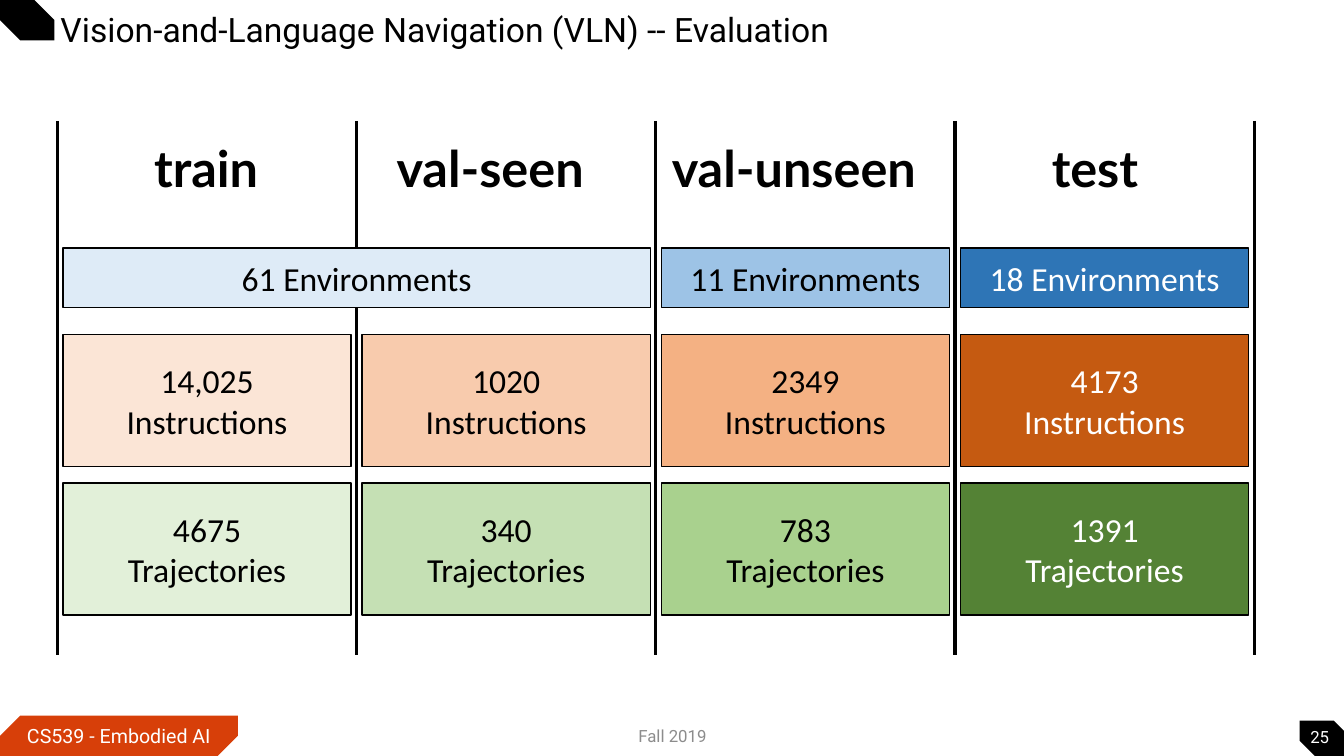
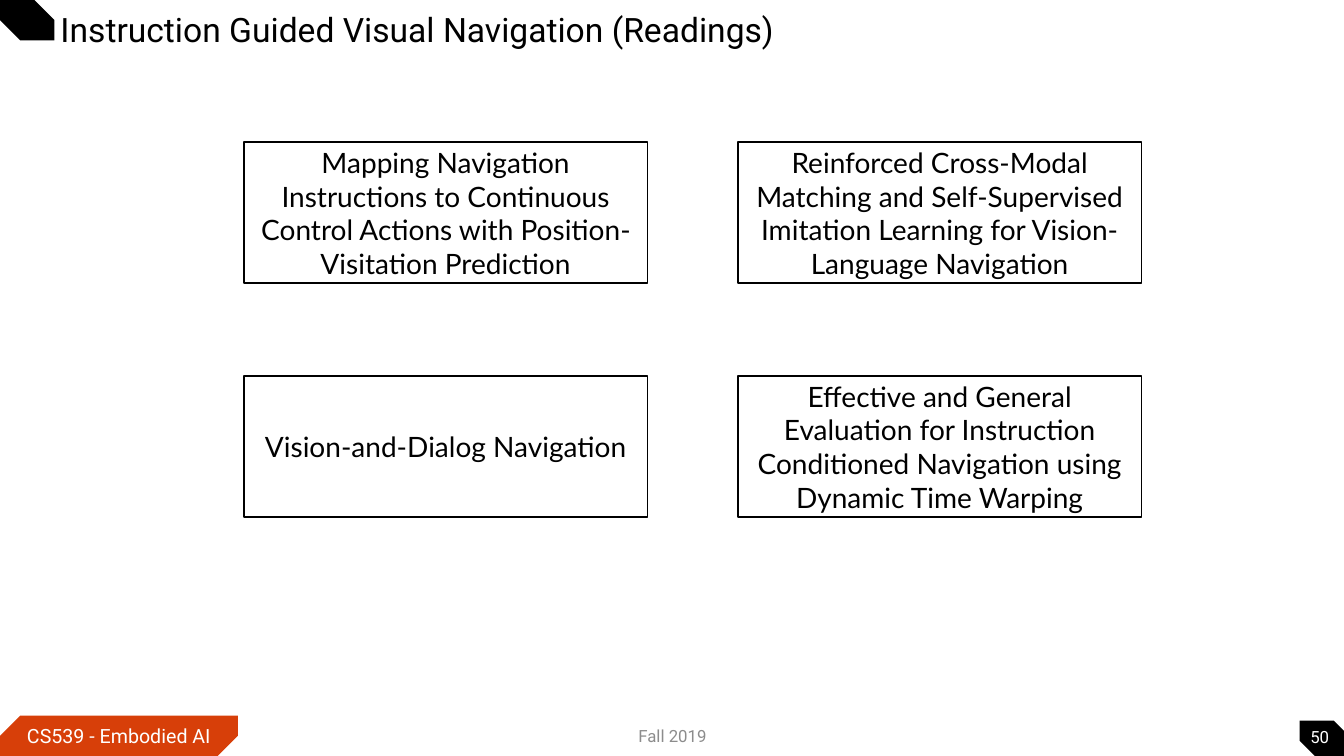
"""Build two lecture slides on instruction-guided navigation."""
from lxml import etree
from pptx import Presentation
from pptx.dml.color import RGBColor
from pptx.enum.shapes import MSO_CONNECTOR, MSO_SHAPE
from pptx.enum.text import MSO_ANCHOR, PP_ALIGN
from pptx.oxml.ns import qn
from pptx.util import Inches, Pt

RECTANGLE, SNIPPED = MSO_SHAPE.RECTANGLE, MSO_SHAPE.SNIP_2_DIAG_RECTANGLE
STRAIGHT = MSO_CONNECTOR.STRAIGHT
LEFT, CENTER = PP_ALIGN.LEFT, PP_ALIGN.CENTER
TOP, MIDDLE = MSO_ANCHOR.TOP, MSO_ANCHOR.MIDDLE

WIDTH, HEIGHT = 13.33, 7.5
COLORS = {
    "black": "000000", "white": "FFFFFF", "orange": "D73F09", "gray": "8C8C8C",
    "blue 1": "DEEBF7", "blue 2": "9DC3E6", "blue 3": "2E75B6",
    "rust 1": "FBE5D6", "rust 2": "F8CBAD", "rust 3": "F4B183", "rust 4": "C55A11",
    "green 1": "E2F0D9", "green 2": "C5E0B4", "green 3": "A9D18E", "green 4": "548235",
}
DARK_FILLS = {"blue 3", "rust 4", "green 4"}

SPLIT_LEFT, SPLIT_RIGHT, SPLIT_COUNT, SPLIT_GAP = 0.57, 12.44, 4, 0.11
SPLIT_PITCH = (SPLIT_RIGHT - SPLIT_LEFT) / SPLIT_COUNT
RULE_TOP, RULE_BOTTOM = 1.2, 6.5
SPLIT_NAMES = [("train", 0.29), ("val-seen", 1.1), ("val-unseen", 2.02), ("test", 3.29)]
SPLIT_ROWS = [
    (2.46, 0.59, [
        (0, 2, "blue 1", ["61 Environments"]),
        (2, 1, "blue 2", ["11 Environments"]),
        (3, 1, "blue 3", ["18 Environments"]),
    ]),
]
for row_top, family, unit, counts in [
    (3.32, "rust", "Instructions", ["14,025", "1020", "2349", "4173"]),
    (4.79, "green", "Trajectories", ["4675", "340", "783", "1391"]),
]:
    SPLIT_ROWS.append((row_top, 1.31, [
        (column, 1, f"{family} {column + 1}", [count, unit])
        for column, count in enumerate(counts)
    ]))

READING_LEFT, READING_TOP = 2.42, 1.41
READING_PITCH_X, READING_PITCH_Y = 4.9, 2.32
READINGS = [
    "Mapping Navigation Instructions to Continuous Control Actions "
    "with Position-Visitation Prediction",
    "Reinforced Cross-Modal Matching and Self-Supervised Imitation Learning "
    "for Vision-Language Navigation",
    "Vision-and-Dialog Navigation",
    "Effective and General Evaluation for Instruction Conditioned Navigation "
    "using Dynamic Time Warping",
]


def color(name):
    """Return the named colour."""
    return RGBColor.from_string(COLORS[name])


class Deck:
    """Hold the presentation, its style and the current slide."""

    def __init__(self):
        """Start an empty widescreen presentation."""
        self.presentation = Presentation()
        self.presentation.slide_width = Inches(WIDTH)
        self.presentation.slide_height = Inches(HEIGHT)
        self.slide = None

    def add_slide(self, title, number):
        """Add a slide with the shared title, corner marks and footer."""
        self.slide = self.presentation.slides.add_slide(self.presentation.slide_layouts[6])
        self.snipped((12.89, 7.15, 0.54, 0.4), "black", (0, 0.5))
        footer = self.snipped((0, 7.1, 2.36, 0.4), "orange", (0.5, 0))
        self.set_lines(footer, ["CS539 - Embodied AI"], 14, "Roboto", "white")
        self.snipped((0, 0, 0.54, 0.4), "black", (0, 0.5))
        heading = self.text((0, 0.12, 11.32, 0.39), title, 24, align=LEFT, spacing=0.9)
        heading.text_frame.margin_left = Inches(0.6)
        self.text((4.42, 7.1, 4.5, 0.4), "Fall 2019", 12, name="gray")
        self.text((12.89, 7.15, 0.4, 0.31), str(number), 12, name="white")

    def set_lines(self, shape, lines, size, font, name, align=CENTER, anchor=MIDDLE,
                  bold=False, spacing=None):
        """Fill a shape with one paragraph per line."""
        frame = shape.text_frame
        frame.word_wrap = True
        frame.vertical_anchor = anchor
        for index, line in enumerate(lines):
            paragraph = frame.add_paragraph() if index else frame.paragraphs[0]
            paragraph.text = line
            paragraph.alignment = align
            paragraph.line_spacing = spacing
            paragraph.font.size = Pt(size)
            paragraph.font.name = font
            paragraph.font.bold = bold
            paragraph.font.color.rgb = color(name)

    def text(self, box, line, size, font="Roboto", name="black", **style):
        """Add a text box."""
        shape = self.slide.shapes.add_textbox(*map(Inches, box))
        self.set_lines(shape, [line], size, font, name, **style)
        return shape

    def shape(self, kind, box, fill):
        """Add a filled preset shape without shadow."""
        shape = self.slide.shapes.add_shape(kind, *map(Inches, box))
        shape.shadow.inherit = False
        shape.fill.solid()
        shape.fill.fore_color.rgb = color(fill)
        return shape

    def snipped(self, box, fill, snips):
        """Add a borderless mark with two opposite corners cut."""
        shape = self.shape(SNIPPED, box, fill)
        shape.line.fill.background()
        for index, snip in enumerate(snips):
            shape.adjustments[index] = snip
        return shape

    def card(self, box, fill, lines, size, font):
        """Add an outlined rectangle with centred text."""
        shape = self.shape(RECTANGLE, box, fill)
        shape.line.color.rgb = color("black")
        shape.line.width = Pt(1)
        self.set_lines(shape, lines, size, font, "white" if fill in DARK_FILLS else "black")

    def rule(self, x, top, bottom):
        """Add a vertical line."""
        line = self.slide.shapes.add_connector(
            STRAIGHT, Inches(x), Inches(top), Inches(x), Inches(bottom))
        line.line.color.rgb = color("black")
        line.line.width = Pt(2.25)
        etree.SubElement(line._element.spPr, qn("a:effectLst"))


def add_evaluation(deck):
    """Add the slide on the data splits."""
    deck.add_slide("Vision-and-Language Navigation (VLN) -- Evaluation", 25)
    for name, column in SPLIT_NAMES:
        deck.text((SPLIT_LEFT + column * SPLIT_PITCH, 1.01, SPLIT_PITCH, 1.01), name, 36,
                  "Lato", align=LEFT, anchor=TOP, bold=True, spacing=1.5)
    for column in range(SPLIT_COUNT + 1):
        deck.rule(SPLIT_LEFT + column * SPLIT_PITCH, RULE_TOP, RULE_BOTTOM)
    for top, height, cards in SPLIT_ROWS:
        for column, span, fill, lines in cards:
            left = SPLIT_LEFT + column * SPLIT_PITCH + SPLIT_GAP / 2
            deck.card((left, top, span * SPLIT_PITCH - SPLIT_GAP, height),
                      fill, lines, 24, "Calibri")


def add_readings(deck):
    """Add the slide listing the readings."""
    deck.add_slide("Instruction Guided Visual Navigation (Readings)", 50)
    for index, reading in enumerate(READINGS):
        row, column = divmod(index, 2)
        deck.card((READING_LEFT + column * READING_PITCH_X,
                   READING_TOP + row * READING_PITCH_Y, 4, 1.4),
                  "white", [reading], 20, "Lato")


def main():
    """Build and save the presentation."""
    deck = Deck()
    add_evaluation(deck)
    add_readings(deck)
    deck.presentation.save("out.pptx")


if __name__ == "__main__":
    main()
